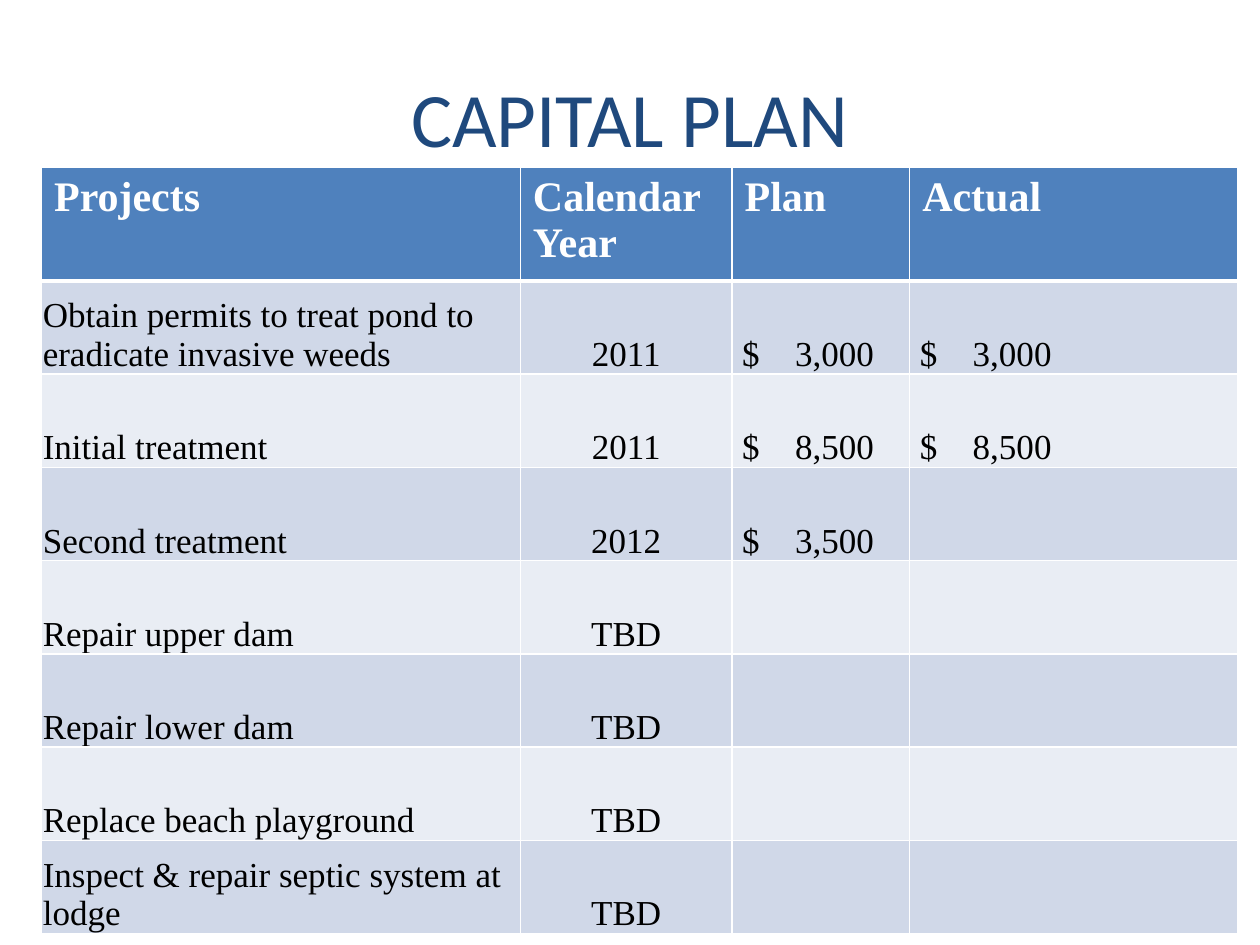
from pptx import Presentation, util as u
from pptx.dml.color import RGBColor
from pptx.enum import text as t
from pptx.oxml.ns import qn
from lxml import etree

HEAD = ["Projects", "Calendar Year", "Plan", "Actual"]
PLANS = [
    ("Obtain permits to treat pond to eradicate invasive weeds", "2011", "$\t3,000", "$\t3,000"),
    ("Initial treatment", "2011", "$\t8,500", "$\t8,500"),
    ("Second treatment", "2012", "$\t3,500", ""),
    ("Repair upper dam", "TBD", "", ""),
    ("Repair lower dam", "TBD", "", ""),
    ("Replace beach playground", "TBD", "", ""),
    ("Inspect & repair septic system at lodge", "TBD", "", ""),
]
WIDTHS = [3.8, 1.68, 1.41, 2.6]
ROW = 0.74
HUES = {"title": "1F497D", "head": "4F81BD", "odd": "D0D8E8", "even": "E9EDF4",
        "white": "FFFFFF", "black": "000000"}
TITLE = {"name": "Calibri", "size": u.Pt(44)}
TOP = {"name": "Times New Roman", "size": u.Pt(24), "bold": True}
BODY = {"name": "Times New Roman", "size": u.Pt(20), "bold": False}
TIGHT = {"margin_left": u.Inches(0.01), "margin_right": u.Inches(0.01),
         "margin_top": u.Inches(0.01), "margin_bottom": 0,
         "vertical_anchor": t.MSO_ANCHOR.BOTTOM}


def apply(obj, fmt):
    for key, val in fmt.items():
        setattr(obj, key, val)


def write(para, words, fmt, hue):
    run = para.add_run()
    run.text = words
    apply(run.font, fmt)
    run.font.color.rgb = RGBColor.from_string(HUES[hue])


def border(cell, row):
    props = cell._tc.get_or_add_tcPr()
    thick = {"lnB": 3} if row == 0 else {"lnT": 3} if row == 1 else {}
    for side in ("lnL", "lnR", "lnT", "lnB"):
        line = etree.SubElement(props, qn("a:" + side), w=str(u.Pt(thick.get(side, 1))))
        fill = etree.SubElement(line, qn("a:solidFill"))
        etree.SubElement(fill, qn("a:srgbClr"), val=HUES["white"])


def add_tab(para, pos):
    tabs = etree.SubElement(para._p.get_or_add_pPr(), qn("a:tabLst"))
    etree.SubElement(tabs, qn("a:tab"), pos=str(u.Inches(pos)), algn="l")


def fill_cell(cell, row, col, words):
    border(cell, row)
    shade = "head" if row == 0 else "odd" if row % 2 else "even"
    cell.fill.solid()
    cell.fill.fore_color.rgb = RGBColor.from_string(HUES[shade])
    if not words:
        return
    para = cell.text_frame.paragraphs[0]
    if row == 0:
        write(para, words, TOP, "white")
        return
    apply(cell, TIGHT)
    if col == 1:
        para.alignment = t.PP_ALIGN.CENTER
    if col > 1:
        cell.margin_left = u.Inches(0.08)
        add_tab(para, 0.42)
    write(para, words, BODY, "black")


def main():
    deck = Presentation()
    deck.slide_width, deck.slide_height = u.Inches(10), u.Inches(7.5)
    slide = deck.slides.add_slide(deck.slide_layouts[6])

    box = slide.shapes.add_textbox(*map(u.Inches, (0.5, 0.3, 9, 1.25)))
    frame = box.text_frame
    apply(frame, {"word_wrap": True, "vertical_anchor": t.MSO_ANCHOR.MIDDLE})
    frame.paragraphs[0].alignment = t.PP_ALIGN.CENTER
    write(frame.paragraphs[0], "CAPITAL PLAN", TITLE, "title")

    rows = [HEAD] + PLANS
    size = (0.33, 1.33, sum(WIDTHS), ROW * len(rows))
    table = slide.shapes.add_table(len(rows), len(HEAD), *map(u.Inches, size)).table
    for col, width in zip(table.columns, WIDTHS):
        col.width = u.Inches(width)
    for r, row in enumerate(rows):
        for c, words in enumerate(row):
            fill_cell(table.cell(r, c), r, c, words)
    deck.save("out.pptx")


if __name__ == "__main__":
    main()
